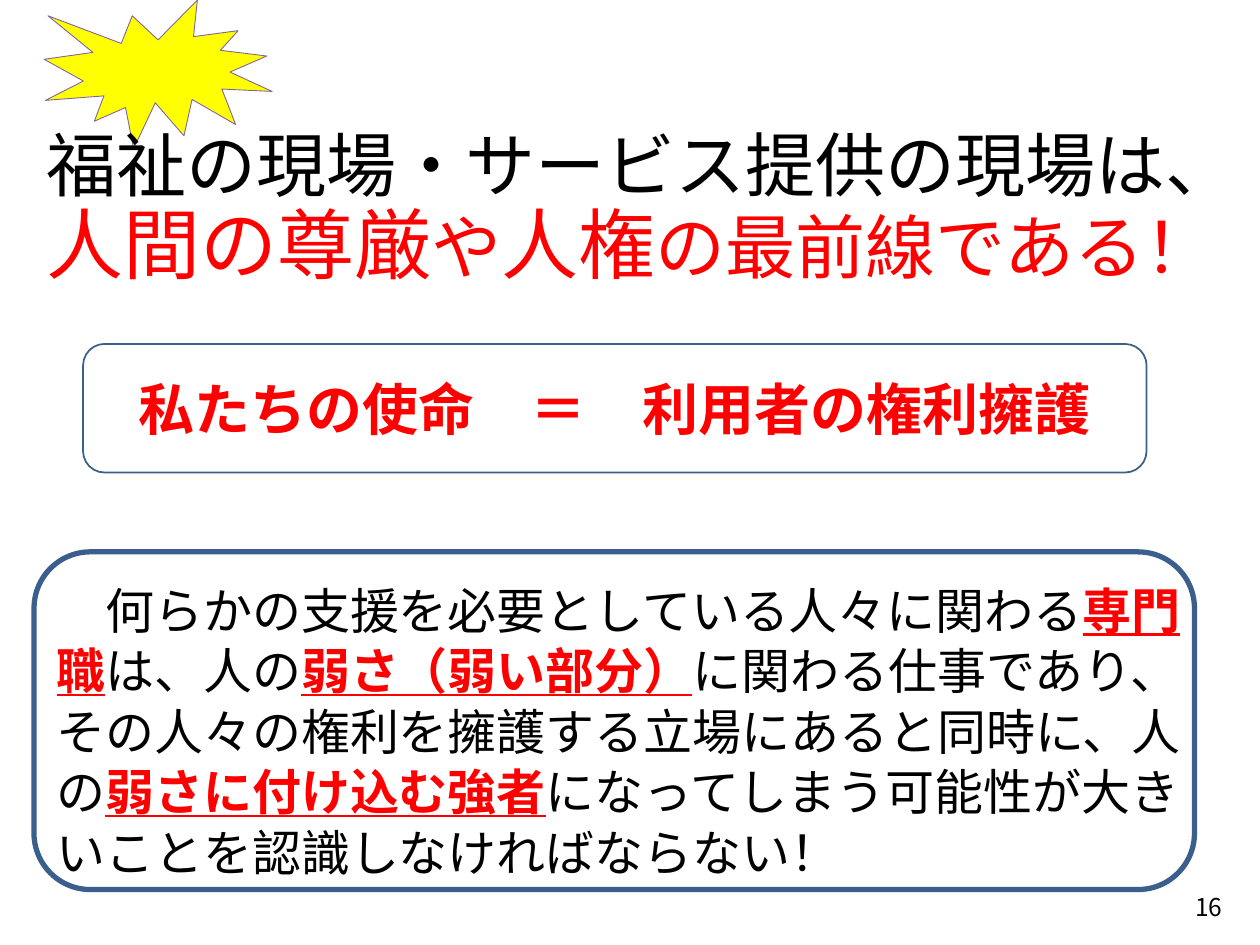
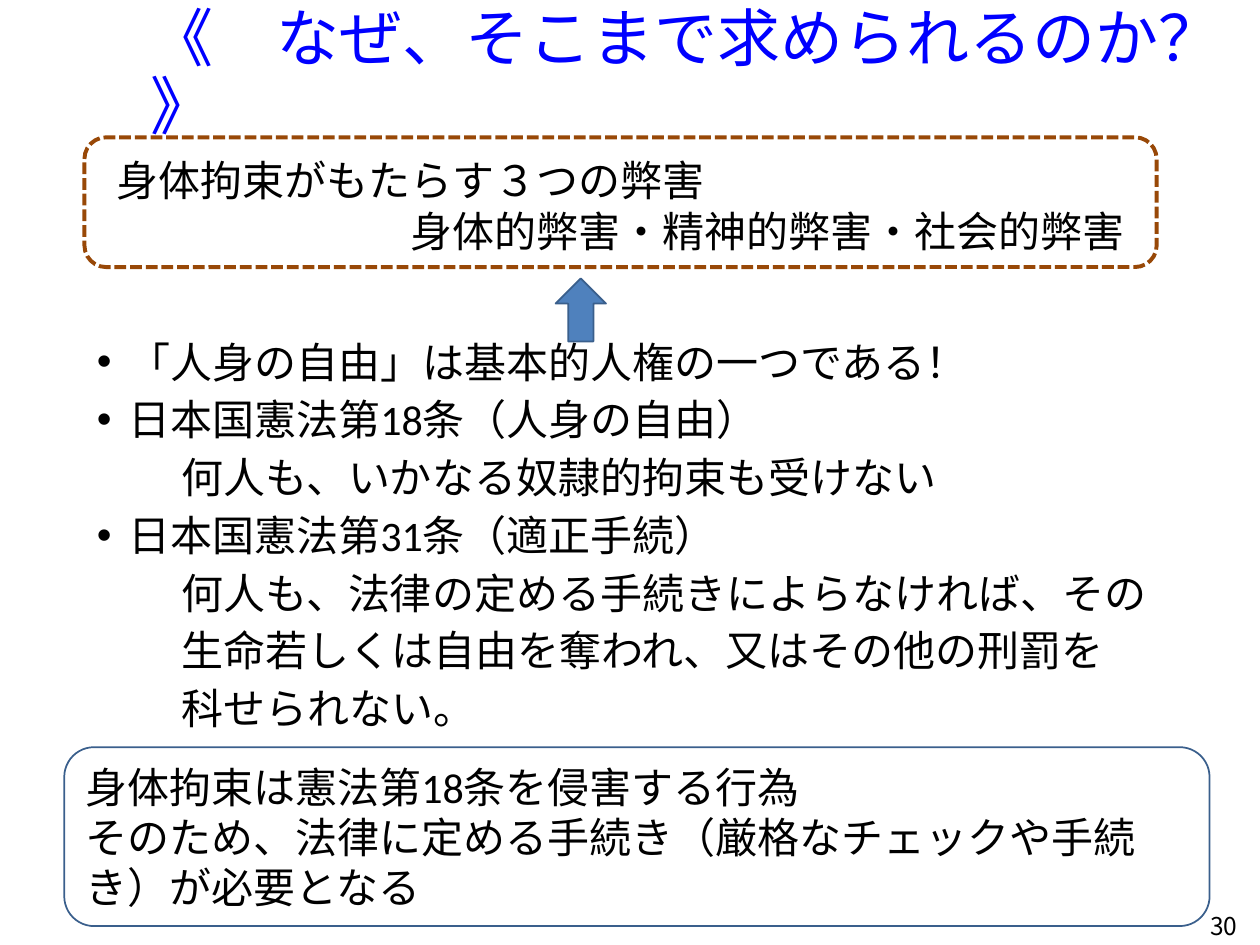
from lxml.etree import SubElement
from pptx import Presentation
from pptx.dml.color import RGBColor
from pptx.enum.dml import MSO_LINE
from pptx.enum.shapes import MSO_SHAPE
from pptx.enum.text import MSO_ANCHOR, PP_ALIGN
from pptx.oxml.ns import qn
from pptx.util import Inches, Pt

COLORS = {
    "black": "000000", "red": "FF0000", "title blue": "0000FF", "yellow": "FFFF00",
    "purple": "8064A2", "outline": "3A5F8C", "arrow": "4F81BD", "brown": "984807",
}
GOTHIC, BODY, LATIN = "Noto Sans CJK JP", "Calibri", "Arial"

# Paragraphs are lists of runs; a run is (text, style).
PLAIN = {"font": LATIN, "size": 28}
STRESS = {"font": GOTHIC, "size": 28, "color": "red", "bold": True, "underline": True}
HEADLINE = {"font": GOTHIC, "size": 40}
RED_HEADLINE = {**HEADLINE, "color": "red"}
BIG_RED_HEADLINE = {**RED_HEADLINE, "size": 44}
QUESTION = {"font": GOTHIC, "size": 36, "color": "title blue"}
MISSION = {"font": BODY, "size": 32, "color": "red", "bold": True}
NOTE = {"font": BODY, "size": 24}
PAGE_NUMBER = {"font": GOTHIC, "size": 14}

FRONT_LINE = [
    [("福祉の現場・サービス提供の現場は、", HEADLINE)],
    [("人間の尊厳", BIG_RED_HEADLINE), ("や", RED_HEADLINE),
     ("人権", BIG_RED_HEADLINE), ("の最前線である！", RED_HEADLINE)],
]
OUR_MISSION = [[("私たちの使命　＝　利用者の権利擁護", MISSION)]]
PROFESSIONALS = [[
    ("　何らかの支援を必要としている人々に関わる", PLAIN),
    ("専門職", STRESS),
    ("は、人の", PLAIN),
    ("弱さ（弱い部分", STRESS),
    ("）", {**STRESS, "font": LATIN}),
    ("に関わる仕事であり、その人々の権利を擁護する立場にあると同時に、人の", PLAIN),
    ("弱さに付け込む強者", STRESS),
    ("になってしまう可能性が大きいことを認識しなければならない！", PLAIN),
]]

WHY = [[("　《　なぜ、そこまで求められるのか？　》", QUESTION)]]
HARMS = [
    [("身体拘束がもたらす３つの弊害", NOTE)],
    [("身体的弊害・精神的弊害・社会的弊害", NOTE)],
]
LAWS = [
    ("「人身の自由」は基本的人権の一つである！", True),
    ("日本国憲法第18条（人身の自由）", True),
    ("何人も、いかなる奴隷的拘束も受けない", False),
    ("日本国憲法第31条（適正手続）", True),
    ("何人も、法律の定める手続きによらなければ、その", False),
    ("生命若しくは自由を奪われ、又はその他の刑罰を", False),
    ("科せられない。", False),
]
CONCLUSION = [
    [("身体拘束は憲法第18条を侵害する行為", NOTE)],
    [("そのため、法律に定める手続き（厳格なチェックや手続き）が必要となる", NOTE)],
]


def color(name):
    return RGBColor.from_string(COLORS[name])


def write(shape, paragraphs, anchor=MSO_ANCHOR.TOP, align=PP_ALIGN.LEFT, spacing=None, top=0.05):
    """Fill a shape with styled runs and return its paragraphs."""
    frame = shape.text_frame
    frame.word_wrap = True
    frame.vertical_anchor = anchor
    frame.margin_top = Inches(top)
    for number, runs in enumerate(paragraphs):
        paragraph = frame.add_paragraph() if number else frame.paragraphs[0]
        paragraph.alignment = align
        if spacing:
            paragraph.line_spacing = spacing
        for text, style in runs:
            run = paragraph.add_run()
            run.text = text
            font = run.font
            font.name = style["font"]
            font.size = Pt(style["size"])
            font.bold = style.get("bold", False)
            font.underline = style.get("underline", False)
            font.color.rgb = color(style.get("color", "black"))
            east_asian = BODY if style["font"] == BODY else LATIN
            SubElement(font._element, qn("a:ea")).set("typeface", east_asian)
    return frame.paragraphs


def add_text(slide, box, paragraphs, **layout):
    return write(slide.shapes.add_textbox(*map(Inches, box)), paragraphs, **layout)


def add_box(slide, kind, box, line="outline", width=1, fill=None):
    shape = slide.shapes.add_shape(kind, *map(Inches, box))
    shape.shadow.inherit = False
    shape.line.color.rgb = color(line)
    shape.line.width = Pt(width)
    if fill:
        shape.fill.solid()
        shape.fill.fore_color.rgb = color(fill)
    else:
        shape.fill.background()
    return shape


def add_page_number(slide, left, top, number):
    add_text(slide, (left, top, 2.25, 0.4), [[(number, PAGE_NUMBER)]],
             anchor=MSO_ANCHOR.MIDDLE, align=PP_ALIGN.RIGHT)


def indent(paragraph, left, bullet=False):
    properties = paragraph._p.get_or_add_pPr()
    properties.set("marL", str(Inches(left)))
    if bullet:
        properties.set("indent", str(-Inches(left)))
        SubElement(properties, qn("a:buFont")).set("typeface", LATIN)
        SubElement(properties, qn("a:buChar")).set("char", "•")


def build_mission(slide):
    add_box(slide, MSO_SHAPE.EXPLOSION1, (0.35, 0, 1.81, 1.18), "purple", 0.5, "yellow")
    add_text(slide, (0.27, 0.28, 9.73, 6.22), FRONT_LINE, spacing=0.9, top=0.76)
    add_page_number(slide, 7.55, 7, "16")
    add_box(slide, MSO_SHAPE.ROUNDED_RECTANGLE, (0.27, 4.38, 9.21, 2.68), width=3)
    mission = add_box(slide, MSO_SHAPE.ROUNDED_RECTANGLE, (0.66, 2.73, 8.44, 1.02))
    write(mission, OUR_MISSION, anchor=MSO_ANCHOR.MIDDLE, align=PP_ALIGN.CENTER)
    add_text(slide, (0.35, 4.04, 9.25, 3.46), PROFESSIONALS, spacing=1.03, top=0.55)


def build_reasons(slide):
    add_text(slide, (0.6, 0.08, 9, 1.03), WHY, anchor=MSO_ANCHOR.MIDDLE, spacing=0.9)
    laws = add_text(slide, (0.67, 2.7, 9.25, 3.54), [[(text, NOTE)] for text, _ in LAWS],
                    spacing=Pt(23))
    for paragraph, (_, bullet) in zip(laws, LAWS):
        paragraph.space_before = Pt(10)
        indent(paragraph, 0.25 if bullet else 0.67, bullet)
    add_page_number(slide, 7.67, 7.15, "30")
    conclusion = add_box(slide, MSO_SHAPE.ROUNDED_RECTANGLE, (0.51, 5.93, 9.09, 1.42))
    write(conclusion, CONCLUSION, anchor=MSO_ANCHOR.MIDDLE)
    harms = add_text(slide, (0.83, 1.18, 8.77, 0.91), HARMS)
    indent(harms[1], 2.33)
    frame = add_box(slide, MSO_SHAPE.ROUNDED_RECTANGLE, (0.67, 1.09, 8.51, 1.03), "brown", 2.25)
    frame.line.dash_style = MSO_LINE.SQUARE_DOT
    add_box(slide, MSO_SHAPE.UP_ARROW, (4.41, 2.21, 0.4, 0.5), fill="arrow")


def main():
    presentation = Presentation()
    presentation.slide_width, presentation.slide_height = Inches(10), Inches(7.5)
    for build in (build_mission, build_reasons):
        build(presentation.slides.add_slide(presentation.slide_layouts[6]))
    presentation.save("out.pptx")


if __name__ == "__main__":
    main()
